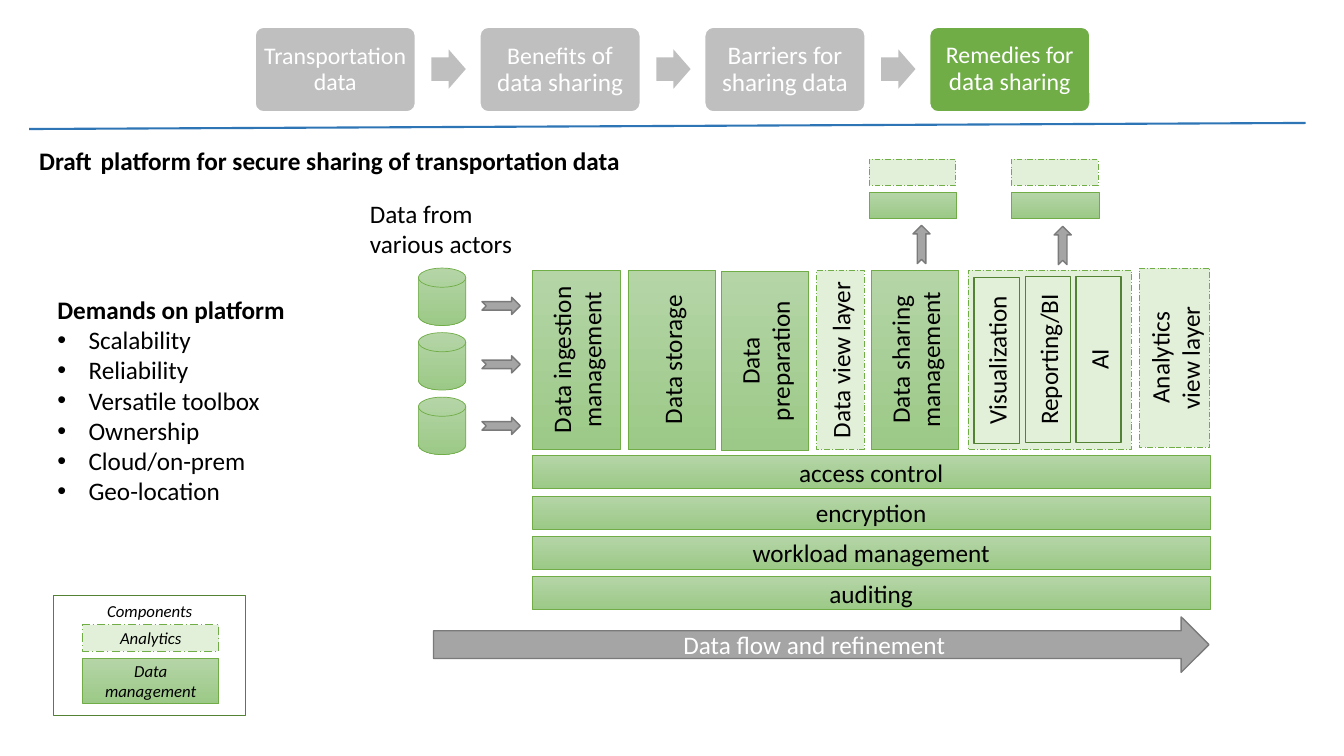
"""Build the slide on a platform for secure sharing of transportation data."""
from lxml import etree
from pptx import Presentation
from pptx.dml.color import RGBColor
from pptx.enum import dml, shapes, text
from pptx.oxml.ns import qn
from pptx.util import Inches, Pt

KIND = shapes.MSO_SHAPE
GREEN, DARK_GREEN, PALE = "70AD47", "548235", "E2F0D9"
SILVER, GREY, DARK_GREY = "BFBFBF", "A5A5A5", "7A7A7A"
BLUE, BLACK, WHITE = "2E75B6", "000000", "FFFFFF"
GRADIENT = ("B5D5A7", "9CC987")

STEPS = [
    [("Transportation data", 17)],
    [("Benefits", 17), (" of data sharing", 18)],
    [("Barriers for sharing data", 18)],
    [("Remedies for ", 17), ("data", 18), (" sharing", 17)],
]
DATA_COLUMNS = [
    (5.28, 2.68, "Data ingestion management"),
    (6.23, 2.68, "Data storage"),
    (7.15, 2.69, "Data preparation"),
    (8.64, 2.68, "Data sharing management"),
]
ANALYTICS_COLUMNS = [
    (8.1, 2.68, 0.47, "Data view layer"),
    (9.6, 2.68, 1.62, ""),
    (11.3, 2.66, 0.7, "Analytics\vview layer"),
]
TOOLS = [(9.66, 2.75, "Visualization"), (10.17, 2.74, "Reporting/BI"), (10.67, 2.74, "AI")]
SERVICES = ["access control", "encryption", "workload management", "auditing"]
DEMANDS = ["Scalability", "Reliability", "Versatile toolbox", "Ownership",
           "Cloud/on-prem", "Geo-location"]


def colour(value):
    """Turn a hex string into a colour."""
    return RGBColor.from_string(value)


def style(para, size=18, ink=BLACK, bold=False, italic=False):
    """Set the font of a whole paragraph."""
    font = para.font
    font.name, font.size, font.bold, font.italic = "Calibri", Pt(size), bold, italic
    font.color.rgb = colour(ink)


def add_spans(para, spans):
    """Add runs that differ in size."""
    for words, size in spans:
        span = para.add_run()
        span.text = words
        span.font.size = Pt(size)


def add_block(page, kind, place, fill=None, line=None, width=0.5, dashed=False):
    """Add a preset shape with a plain, gradient or empty fill."""
    box = page.shapes.add_shape(kind, *map(Inches, place))
    box.shadow.inherit = False
    if fill is None:
        box.fill.background()
    elif fill == GRADIENT:
        box.fill.gradient()
        box.fill.gradient_angle = 270
        for stop, shade in zip(box.fill.gradient_stops, GRADIENT):
            stop.color.rgb = colour(shade)
    else:
        box.fill.solid()
        box.fill.fore_color.rgb = colour(fill)
    if line is None:
        box.line.fill.background()
    else:
        box.line.color.rgb = colour(line)
        box.line.width = Pt(width)
    if dashed:
        box.line.dash_style = dml.MSO_LINE.LONG_DASH_DOT
    return box


def add_label(box, words, vertical=False, **font):
    """Write centred text in a shape, turned upwards if vertical."""
    frame = box.text_frame
    frame.vertical_anchor = text.MSO_ANCHOR.MIDDLE
    if vertical:
        frame._txBody.bodyPr.set("vert", "vert270")
    para = frame.paragraphs[0]
    para.text = words
    para.alignment = text.PP_ALIGN.CENTER
    style(para, **font)


def add_data_block(page, place, kind=KIND.RECTANGLE, width=0.5):
    """Add a data management block."""
    return add_block(page, kind, place, GRADIENT, GREEN, width)


def add_analytics_block(page, place, width=0.5):
    """Add a dashed analytics block."""
    return add_block(page, KIND.RECTANGLE, place, PALE, GREEN, width, dashed=True)


def add_small_arrow(page, left, top, rotation=0):
    """Add a small notched arrow."""
    arrow = add_block(page, KIND.NOTCHED_RIGHT_ARROW, (left, top, 0.38, 0.17), GREY, DARK_GREY, 1)
    arrow.rotation = rotation


def add_steps(page):
    """Add the row of steps, the last one highlighted, and the rule below."""
    for index, spans in enumerate(STEPS):
        left = 2.53 + 2.23 * index
        last = index == len(STEPS) - 1
        box = add_block(page, KIND.ROUNDED_RECTANGLE, (left, 0.27, 1.59, 0.84),
                        GREEN if last else SILVER, WHITE, 1)
        box.adjustments[0] = 0.1
        frame = box.text_frame
        frame.margin_left = frame.margin_right = Inches(0.04)
        add_label(box, "", size=17, ink=WHITE)
        frame.paragraphs[0].line_spacing = 0.9
        add_spans(frame.paragraphs[0], spans)
        if not last:
            arrow = add_block(page, KIND.RIGHT_ARROW, (left + 1.75, 0.49, 0.34, 0.39), SILVER)
            arrow.adjustments[0] = 0.6
    rule = page.shapes.add_connector(shapes.MSO_CONNECTOR.STRAIGHT,
                                     *map(Inches, (0.29, 1.28, 12.95, 1.22)))
    rule.line.color.rgb = colour(BLUE)
    rule.line.width = Pt(1.5)
    etree.SubElement(rule._element.spPr, qn("a:effectLst"))


def add_texts(page):
    """Add the heading, the source caption and the list of demands."""
    heading = page.shapes.add_textbox(*map(Inches, (0.29, 1.32, 6.1, 0.5))).text_frame
    heading.word_wrap = True
    heading.vertical_anchor = text.MSO_ANCHOR.MIDDLE
    para = heading.paragraphs[0]
    para.line_spacing = 0.9
    style(para, bold=True)
    add_spans(para, [("Draft", 18), (" ", 28),
                     ("platform for secure sharing of transportation data", 18)])

    caption = page.shapes.add_textbox(*map(Inches, (3.57, 1.92, 1.63, 0.71))).text_frame
    caption.paragraphs[0].text = "Data from\vvarious actors"
    style(caption.paragraphs[0])

    demands = page.shapes.add_textbox(*map(Inches, (0.47, 2.87, 2.49, 2.52))).text_frame
    demands.paragraphs[0].text = "Demands on platform"
    style(demands.paragraphs[0], bold=True)
    for demand in DEMANDS:
        para = demands.add_paragraph()
        para.text = demand
        properties = para._p.get_or_add_pPr()
        properties.set("marL", str(Inches(0.31)))
        properties.set("indent", str(Inches(-0.31)))
        etree.SubElement(properties, qn("a:buFont"), typeface="Arial")
        etree.SubElement(properties, qn("a:buChar"), char="•")
        style(para)


def add_legend(page):
    """Add the key to the two kinds of component."""
    frame = add_block(page, KIND.RECTANGLE, (0.53, 5.91, 1.91, 1.19), None, DARK_GREEN, 0.75)
    analytics = add_analytics_block(page, (0.82, 6.2, 1.35, 0.26), 0.75)
    data = add_data_block(page, (0.82, 6.53, 1.35, 0.45), width=0.75)
    for box, words in ((frame, "Components"), (analytics, "Analytics"), (data, "Data management")):
        add_label(box, words, size=12, italic=True)
    frame.text_frame.vertical_anchor = text.MSO_ANCHOR.TOP


def add_platform(page):
    """Add the sources, columns, outputs, services and flow arrow."""
    for index, arrow_top in enumerate((2.95, 3.53, 4.14)):
        add_data_block(page, (4.15, 2.66 + 0.64 * index, 0.47, 0.57),
                       KIND.FLOWCHART_MAGNETIC_DISK)
        add_small_arrow(page, 4.78, arrow_top)
    for left, top, words in DATA_COLUMNS:
        add_label(add_data_block(page, (left, top, 0.87, 1.78)), words, vertical=True)
    for left, top, width, words in ANALYTICS_COLUMNS:
        box = add_analytics_block(page, (left, top, width, 1.78))
        if words:
            add_label(box, words, vertical=True)
    for left, top, words in TOOLS:
        box = add_block(page, KIND.RECTANGLE, (left, top, 0.45, 1.65), PALE, DARK_GREEN, 1)
        add_label(box, words, vertical=True)
    for left, arrow_left, arrow_top in ((8.62, 8.95, 2.34), (10.03, 10.35, 2.35)):
        add_small_arrow(page, arrow_left, arrow_top, 270)
        add_data_block(page, (left, 1.91, 0.87, 0.26))
        add_analytics_block(page, (left, 1.58, 0.86, 0.26))
    for index, service in enumerate(SERVICES):
        add_label(add_data_block(page, (5.28, 4.52 + 0.4 * index, 6.72, 0.33)), service)
    flow = add_block(page, KIND.RIGHT_ARROW, (4.3, 6.12, 7.69, 0.55), GREY, DARK_GREY, 1)
    add_label(flow, "Data flow and refinement", ink=WHITE)


def main():
    """Build and save the deck."""
    deck = Presentation()
    deck.slide_width, deck.slide_height = Inches(13.33), Inches(7.5)
    page = deck.slides.add_slide(deck.slide_layouts[6])
    add_steps(page)
    add_legend(page)
    add_platform(page)
    add_texts(page)
    deck.save("out.pptx")


if __name__ == "__main__":
    main()
